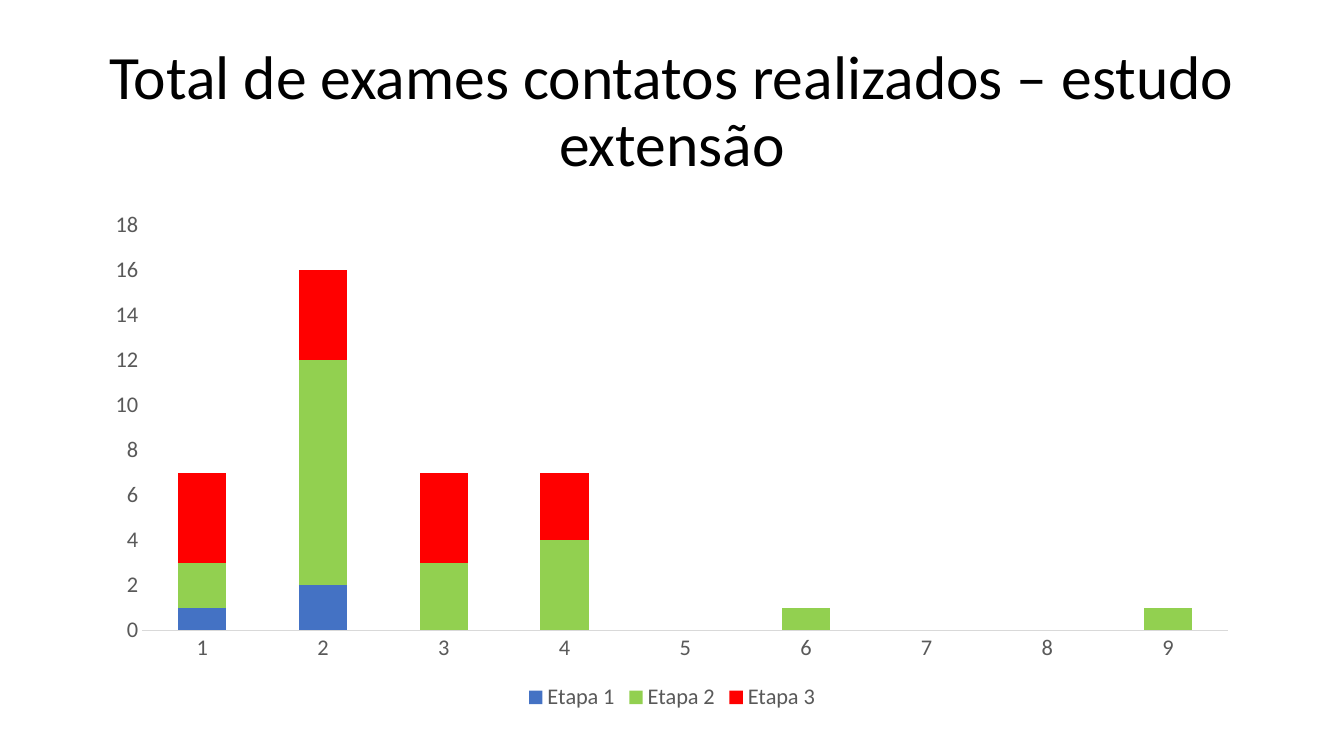
from dataclasses import dataclass

from pptx import Presentation
from pptx.chart.chart import Chart
from pptx.chart.data import CategoryChartData
from pptx.dml.color import RGBColor
from pptx.enum.chart import XL_CHART_TYPE, XL_LEGEND_POSITION, XL_TICK_MARK
from pptx.enum.text import MSO_ANCHOR, MSO_AUTO_SIZE, PP_ALIGN
from pptx.slide import Slide
from pptx.text.text import Font
from pptx.util import Cm, Pt

STACKED = XL_CHART_TYPE.COLUMN_STACKED
LEGEND_BOTTOM = XL_LEGEND_POSITION.BOTTOM
NO_TICK = XL_TICK_MARK.NONE
MIDDLE = MSO_ANCHOR.MIDDLE
NO_AUTOFIT = MSO_AUTO_SIZE.NONE
CENTER = PP_ALIGN.CENTER


@dataclass(frozen=True)
class Theme:
    font: str = "Calibri"
    title_size: int = 44
    label_size: int = 16
    title_color: str = "000000"
    label_color: str = "595959"
    axis_color: str = "D9D9D9"


@dataclass(frozen=True)
class Stage:
    name: str
    exams: tuple[int | None, ...]
    color: str


THEME = Theme()
CONTACTS = [str(number) for number in range(1, 10)]
STAGES = [
    Stage("Etapa 1", (1, 2) + (None,) * 7, "4472C4"),
    Stage("Etapa 2", (2, 10, 3, 4, None, 1, None, None, 1), "92D050"),
    Stage("Etapa 3", (4, 4, 4, 3) + (None,) * 5, "FF0000"),
]
LEFT, WIDTH = Cm(2.33), Cm(29.21)


def style_font(font: Font, size: int, color: str) -> None:
    font.name = THEME.font
    font.size = Pt(size)
    font.color.rgb = RGBColor.from_string(color)


def add_title(slide: Slide, wording: str) -> None:
    title = slide.shapes.title
    title.left, title.top, title.width, title.height = LEFT, Cm(1.01), WIDTH, Cm(3.68)
    frame = title.text_frame
    frame.text = wording
    frame.word_wrap = True
    frame.auto_size = NO_AUTOFIT
    frame.vertical_anchor = MIDDLE
    paragraph = frame.paragraphs[0]
    paragraph.alignment = CENTER
    paragraph.line_spacing = 0.9
    style_font(paragraph.runs[0].font, THEME.title_size, THEME.title_color)


def style_axes(chart: Chart) -> None:
    for axis in (chart.category_axis, chart.value_axis):
        axis.major_tick_mark = NO_TICK
        axis.minor_tick_mark = NO_TICK
        axis.has_major_gridlines = False
        style_font(axis.tick_labels.font, THEME.label_size, THEME.label_color)
    contact_line = chart.category_axis.format.line
    contact_line.color.rgb = RGBColor.from_string(THEME.axis_color)
    contact_line.width = Pt(0.75)
    exam_axis = chart.value_axis
    exam_axis.format.line.fill.background()
    exam_axis.minimum_scale = 0
    exam_axis.maximum_scale = 18
    exam_axis.major_unit = 2
    exam_axis.tick_labels.number_format = "###0"
    exam_axis.tick_labels.number_format_is_linked = False


def add_exam_chart(slide: Slide, stages: list[Stage]) -> None:
    exam_data = CategoryChartData(number_format="###0")
    exam_data.categories = CONTACTS
    for stage in stages:
        exam_data.add_series(stage.name, stage.exams)
    chart = slide.shapes.add_chart(
        STACKED, LEFT, Cm(5.08), WIDTH, Cm(12.95), exam_data
    ).chart
    style_font(chart.font, THEME.label_size, THEME.label_color)
    chart.has_title = False
    style_axes(chart)
    chart.has_legend = True
    chart.legend.position = LEGEND_BOTTOM
    chart.legend.include_in_layout = False
    style_font(chart.legend.font, THEME.label_size, THEME.label_color)
    columns = chart.plots[0]
    columns.gap_width = 150
    columns.overlap = 100
    columns.vary_by_categories = False
    for stage, column in zip(stages, columns.series):
        column.format.fill.solid()
        column.format.fill.fore_color.rgb = RGBColor.from_string(stage.color)


def main() -> None:
    presentation = Presentation()
    presentation.slide_width = Cm(33.87)
    presentation.slide_height = Cm(19.05)
    slide = presentation.slides.add_slide(presentation.slide_layouts[5])
    add_title(slide, "Total de exames contatos realizados – estudo extensão")
    add_exam_chart(slide, STAGES)
    presentation.save("out.pptx")


if __name__ == "__main__":
    main()
